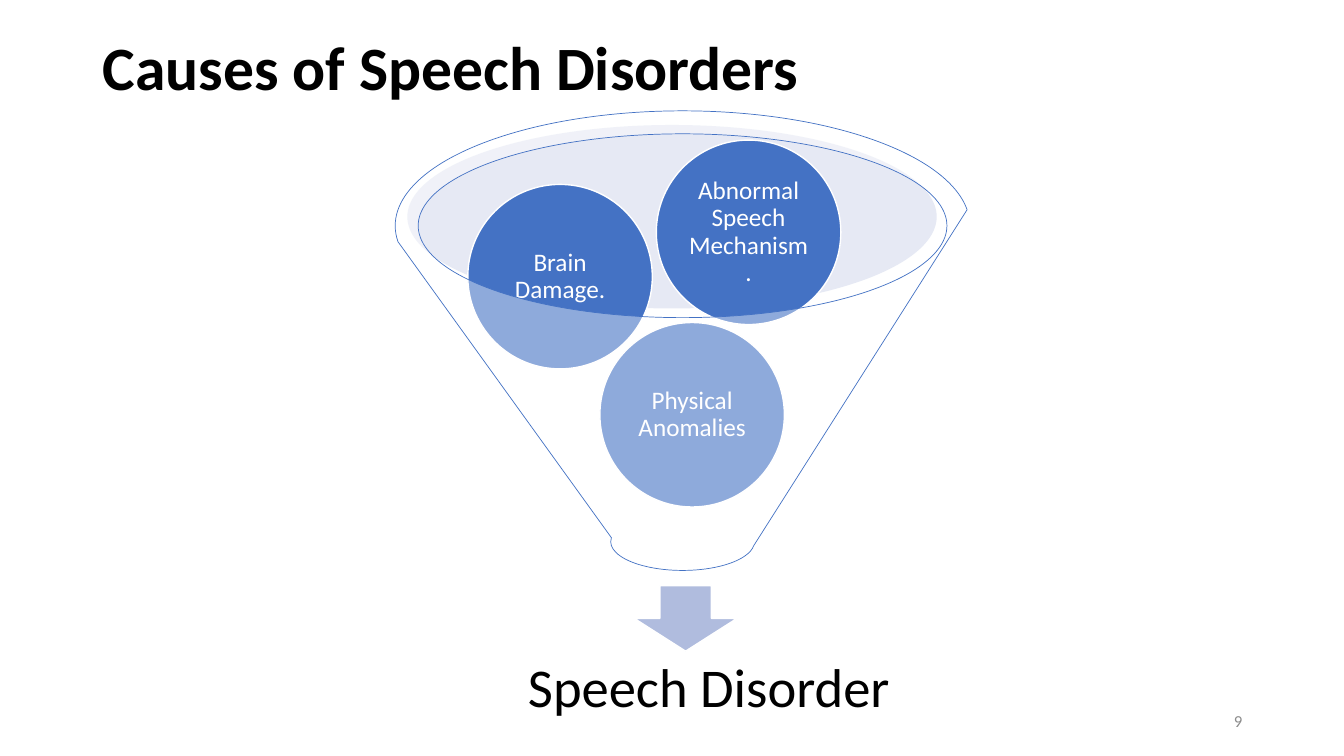
from lxml import etree
from pptx import Presentation
from pptx.dml.color import RGBColor
from pptx.enum.shapes import MSO_SHAPE
from pptx.enum.text import MSO_ANCHOR, MSO_AUTO_SIZE, PP_ALIGN
from pptx.oxml.ns import qn
from pptx.util import Inches, Pt

ELLIPSE, FUNNEL, DOWN_ARROW = MSO_SHAPE.OVAL, MSO_SHAPE.FUNNEL, MSO_SHAPE.DOWN_ARROW
MIDDLE, NO_AUTOFIT = MSO_ANCHOR.MIDDLE, MSO_AUTO_SIZE.NONE
LEFT, CENTER, RIGHT = PP_ALIGN.LEFT, PP_ALIGN.CENTER, PP_ALIGN.RIGHT

BLACK = RGBColor(0x00, 0x00, 0x00)
WHITE = RGBColor(0xFF, 0xFF, 0xFF)
BLUE = RGBColor(0x44, 0x72, 0xC4)
PALE_BLUE = RGBColor(0xC1, 0xC9, 0xE4)
ARROW_BLUE = RGBColor(0xB0, 0xBC, 0xDE)
GREY = RGBColor(0x8C, 0x8C, 0x8C)

FONT = "Calibri"
CAUSE_DIAMETER = 1.83
CAUSES = [
    ("Physical Anomalies", 5.95, 3.2),
    ("Brain Damage.", 4.64, 1.83),
    ("Abnormal Speech Mechanism.", 6.51, 1.39),
]


def write_text(shape, text, size, color, align, bold=False, margin=None, spacing=0.9):
    frame = shape.text_frame
    frame.text = text
    frame.word_wrap = True
    frame.auto_size = NO_AUTOFIT
    frame.vertical_anchor = MIDDLE
    if margin is not None:
        frame.margin_left = frame.margin_right = Inches(margin)
        frame.margin_top = frame.margin_bottom = Inches(margin)
    paragraph = frame.paragraphs[0]
    paragraph.alignment = align
    paragraph.line_spacing = spacing
    for run in paragraph.runs:
        run.font.name = FONT
        run.font.size = Pt(size)
        run.font.bold = bold
        run.font.color.rgb = color


def add_figure(slide, preset, box, fill, line=None, line_width=1, opacity=None):
    figure = slide.shapes.add_shape(preset, *map(Inches, box))
    figure.shadow.inherit = False
    figure.fill.solid()
    figure.fill.fore_color.rgb = fill
    if opacity is not None:
        color = figure.fill._xPr.find(qn("a:solidFill"))[0]
        etree.SubElement(color, qn("a:alpha")).set("val", str(opacity * 1000))
    if line is None:
        figure.line.fill.background()
    else:
        figure.line.color.rgb = line
        figure.line.width = Pt(line_width)
    return figure


def add_label(slide, box, text, size, color, align, **options):
    label = slide.shapes.add_textbox(*map(Inches, box))
    write_text(label, text, size, color, align, **options)


def add_title(slide, text):
    title = slide.shapes.title
    title.left, title.top = Inches(0.92), Inches(-0.03)
    title.width, title.height = Inches(11.5), Inches(1.45)
    write_text(title, text, 44, BLACK, LEFT, bold=True)


def add_cause(slide, text, left, top):
    box = (left, top, CAUSE_DIAMETER, CAUSE_DIAMETER)
    cause = add_figure(slide, ELLIPSE, box, BLUE, WHITE)
    write_text(cause, text, 18, WHITE, CENTER, margin=0.03)


def main():
    prs = Presentation()
    prs.slide_width, prs.slide_height = Inches(13.33), Inches(7.5)
    slide = prs.slides.add_slide(prs.slide_layouts[5])

    # Title and slide number
    add_title(slide, "Causes of Speech Disorders")
    add_label(slide, (9.42, 6.95, 3, 0.4), "9", 12, GREY, RIGHT, spacing=1.0)

    # Funnel mouth, and the outcome below it
    add_figure(slide, ELLIPSE, (4.04, 1.24, 5.25, 1.82), PALE_BLUE, opacity=40)
    add_figure(slide, DOWN_ARROW, (6.29, 5.81, 1.02, 0.65), ARROW_BLUE, WHITE)
    add_label(slide, (4.59, 6.23, 4.88, 1.22), "Speech Disorder", 39, BLACK, CENTER,
              margin=0.3)

    # Causes, seen through the translucent funnel in front
    for text, left, top in CAUSES:
        add_cause(slide, text, left, top)
    add_figure(slide, FUNNEL, (3.92, 1.1, 5.7, 4.56), WHITE, BLUE, 0.5, opacity=40)

    prs.save("out.pptx")


if __name__ == "__main__":
    main()
